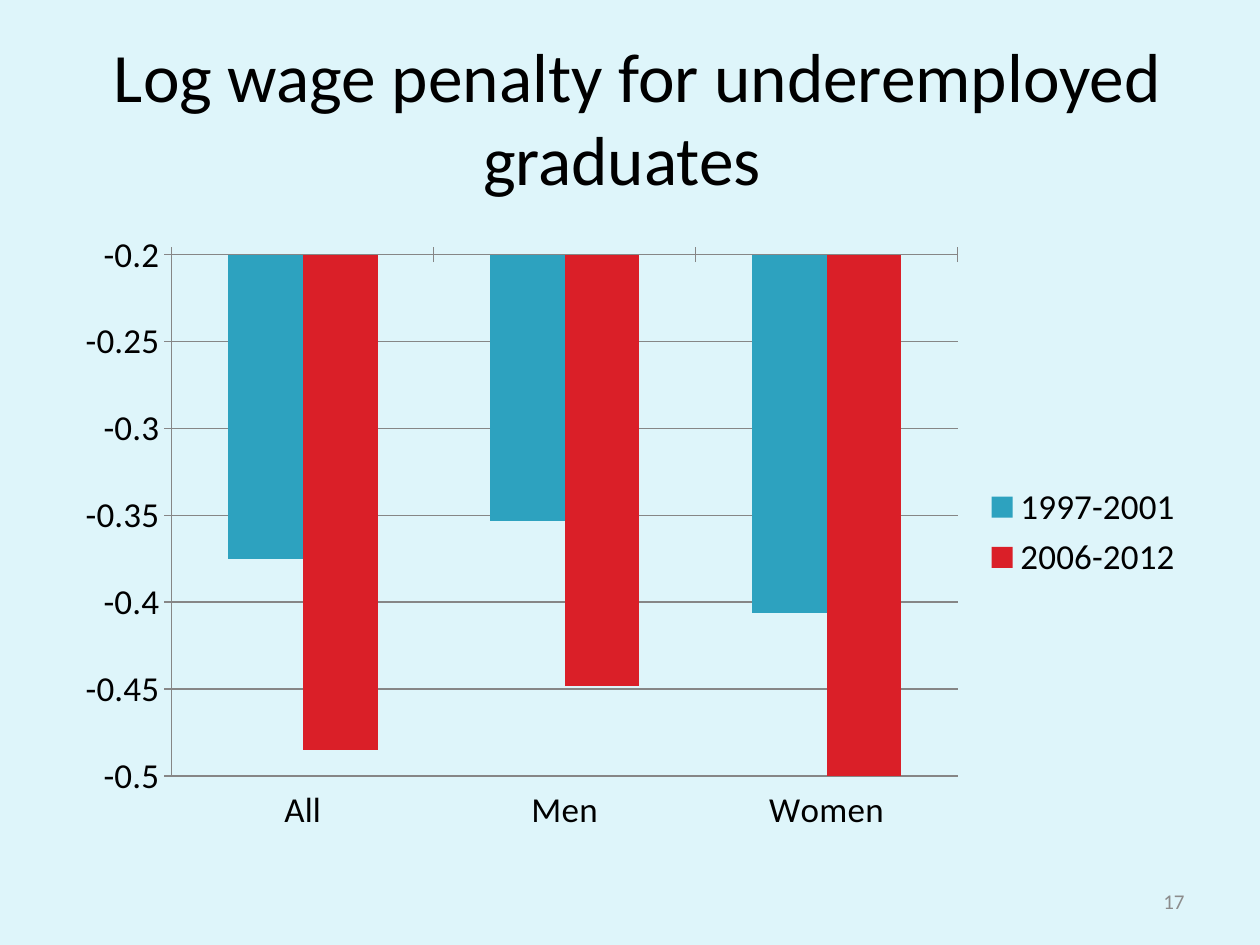
from typing import NamedTuple

from pptx import Presentation
from pptx.chart.data import CategoryChartData as ChartData
from pptx.dml.color import RGBColor
from pptx.enum.chart import XL_CHART_TYPE as Kind
from pptx.enum.chart import XL_LEGEND_POSITION as Place
from pptx.enum.chart import XL_TICK_LABEL_POSITION as Label
from pptx.enum.chart import XL_TICK_MARK as Tick
from pptx.enum.text import MSO_ANCHOR as Anchor
from pptx.enum.text import PP_ALIGN as Align
from pptx.util import Inches, Pt

SKY = RGBColor(0xDE, 0xF5, 0xFA)
BLACK = RGBColor(0, 0, 0)
GRAY = RGBColor(0x8C, 0x8C, 0x8C)
LINE = RGBColor(0x86, 0x86, 0x86)
TEAL = RGBColor(0x2D, 0xA2, 0xBF)
RED = RGBColor(0xDA, 0x1F, 0x28)
FACE = "Calibri"


class Box(NamedTuple):
    left: float
    top: float
    width: float
    height: float

    def inches(self) -> list:
        return [Inches(n) for n in self]


class Series(NamedTuple):
    name: str
    vals: tuple
    color: RGBColor


GROUPS = ("All", "Men", "Women")
SPANS = (
    Series("1997-2001", (-0.375, -0.353, -0.406), TEAL),
    Series("2006-2012", (-0.485, -0.448, -0.521), RED),
)


def style(font, size: float, color: RGBColor = BLACK) -> None:
    font.name = FACE
    font.size = Pt(size)
    font.color.rgb = color


def add_text(slide, text: str, box: Box, *, size: float,
             color: RGBColor = BLACK, align=Align.CENTER) -> None:
    frame = slide.shapes.add_textbox(*box.inches()).text_frame
    frame.word_wrap = True
    frame.vertical_anchor = Anchor.MIDDLE
    para = frame.paragraphs[0]
    para.alignment = align
    run = para.add_run()
    run.text = text
    style(run.font, size, color)


def set_axis(axis, mark) -> None:
    axis.major_tick_mark = mark
    axis.minor_tick_mark = Tick.NONE
    axis.format.line.color.rgb = LINE
    axis.format.line.width = Pt(0.75)
    labels = axis.tick_labels
    labels.number_format = "General"
    labels.number_format_is_linked = False
    style(labels.font, 20)


def add_bars(slide, box: Box) -> None:
    data = ChartData()
    data.categories = GROUPS
    for span in SPANS:
        data.add_series(span.name, span.vals)
    chart = slide.shapes.add_chart(
        Kind.COLUMN_CLUSTERED, *box.inches(), data).chart
    chart.has_title = False
    style(chart.font, 18)

    # Bars
    plot = chart.plots[0]
    plot.gap_width = 150
    plot.vary_by_categories = False
    for bars, span in zip(plot.series, SPANS):
        bars.invert_if_negative = False
        bars.format.fill.solid()
        bars.format.fill.fore_color.rgb = span.color

    # Axes
    groups, wage = chart.category_axis, chart.value_axis
    set_axis(groups, Tick.CROSS)
    groups.tick_label_position = Label.LOW
    set_axis(wage, Tick.OUTSIDE)
    wage.minimum_scale = -0.5
    wage.maximum_scale = -0.2
    wage.has_major_gridlines = True
    grid = wage.major_gridlines.format.line
    grid.color.rgb = LINE
    grid.width = Pt(0.75)

    # Legend
    chart.has_legend = True
    chart.legend.position = Place.RIGHT
    chart.legend.include_in_layout = False
    style(chart.legend.font, 20)


def main() -> None:
    deck = Presentation()
    deck.slide_width, deck.slide_height = Inches(10), Inches(7.5)
    slide = deck.slides.add_slide(deck.slide_layouts[6])
    back = slide.background.fill
    back.solid()
    back.fore_color.rgb = SKY

    # Title, chart and page number
    add_text(slide, " Log wage penalty for underemployed graduates ",
             Box(0.5, 0.3, 9, 1.25), size=39.6)
    add_bars(slide, Box(0.5, 1.75, 9, 4.95))
    add_text(slide, "17", Box(7.17, 6.95, 2.33, 0.4),
             size=12, color=GRAY, align=Align.RIGHT)
    deck.save("out.pptx")


if __name__ == "__main__":
    main()
